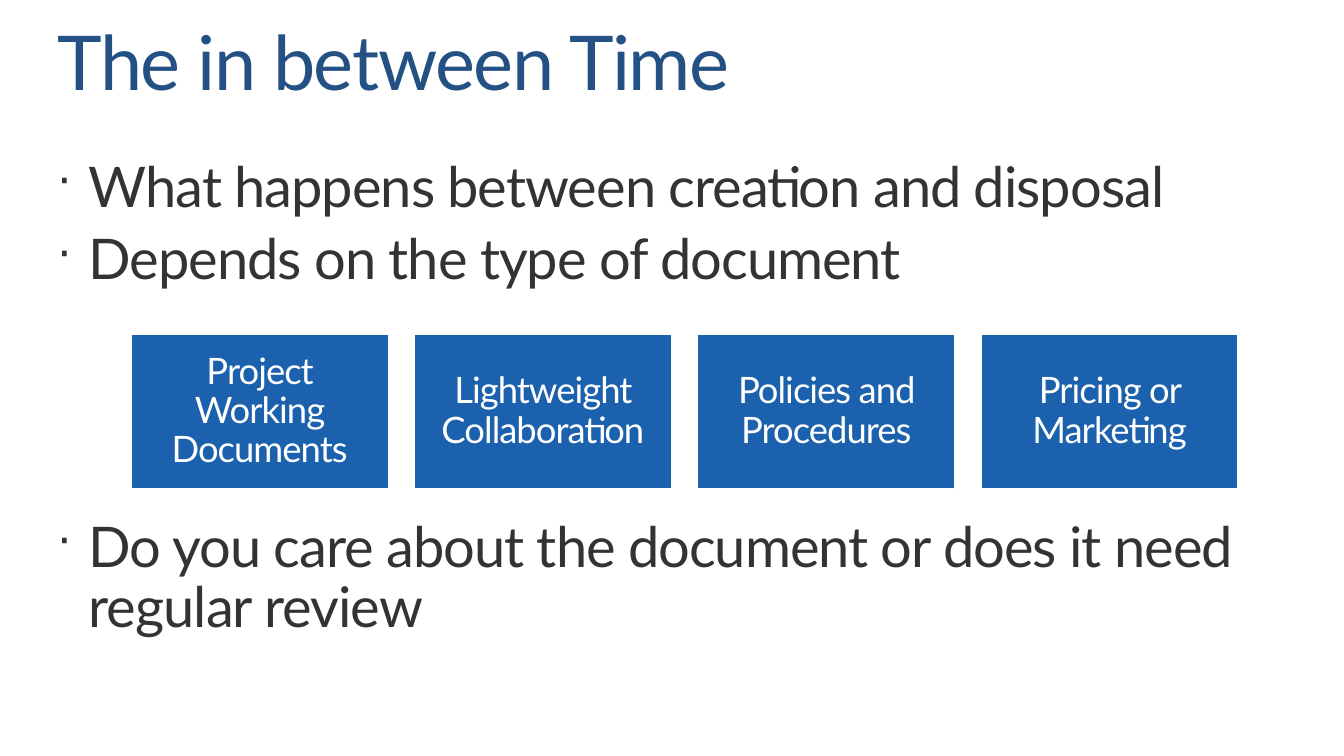
from lxml import etree
from pptx import Presentation, util as u
from pptx.dml.color import RGBColor
from pptx.enum import shapes, text
from pptx.oxml.ns import qn

BLUE, NAVY, GREY, WHITE = "1B61AE", "235183", "333333", "FFFFFF"


def rgb(code):
    return RGBColor.from_string(code)


def write(s, lines, size, color, tracking, inset=0, bullet=False):
    """Fill a shape with one paragraph per line; tracking is in 1/100 pt."""
    tf = s.text_frame
    tf.word_wrap = True
    for side in ("left", "top", "right", "bottom"):
        setattr(tf, f"margin_{side}", u.Inches(inset))
    for i, line in enumerate(lines):
        p = tf.paragraphs[0] if i == 0 else tf.add_paragraph()
        if bullet:
            pPr = p._p.get_or_add_pPr()
            pPr.set("marL", str(u.Inches(0.31)))
            pPr.set("indent", str(-u.Inches(0.31)))
            etree.SubElement(pPr, qn("a:buSzPct"), val="80000")
            etree.SubElement(pPr, qn("a:buChar"), char="·")
        p.line_spacing = 0.9
        if i:
            p.space_before = u.Pt(8.5)
        r = p.add_run()
        r.text = line
        for name, value in {"name": "Lato", "size": u.Pt(size)}.items():
            setattr(r.font, name, value)
        r.font.color.rgb = rgb(color)
        r._r.get_or_add_rPr().set("spc", str(tracking))
    return tf


prs = Presentation()
prs.slide_width, prs.slide_height = u.Inches(13.33), u.Inches(7.5)
slide = prs.slides.add_slide(prs.slide_layouts[6])

# Title and bullets share one left edge and width
LEFT, WIDTH = 0.57, 12.19
blocks = [
    (0.25, 0.82, ["The in between Time"],
     dict(size=54, color=NAVY, tracking=-100)),
    (1.58, 1.4, ["What happens between creation and disposal",
                 "Depends on the type of document"],
     dict(size=40, color=GREY, tracking=-70, bullet=True)),
    (5.15, 1.25, ["Do you care about the document or does it need regular review"],
     dict(size=40, color=GREY, tracking=-70, bullet=True)),
]
for top, height, lines, style in blocks:
    s = slide.shapes.add_textbox(*map(u.Inches, (LEFT, top, WIDTH, height)))
    write(s, lines, **style)

# Row of document types
FIRST, PITCH, ROW = 1.3, 2.81, 3.32
CARD_W, CARD_H = 2.55, 1.53
kinds = ["Project Working Documents", "Lightweight Collaboration",
         "Policies and Procedures", "Pricing or Marketing"]
for col, kind in enumerate(kinds):
    s = slide.shapes.add_shape(
        shapes.MSO_SHAPE.RECTANGLE,
        *map(u.Inches, (FIRST + col * PITCH, ROW, CARD_W, CARD_H)))
    s.shadow.inherit = False
    s.fill.solid()
    s.fill.fore_color.rgb = rgb(BLUE)
    s.line.color.rgb = rgb(WHITE)
    s.line.width = u.Pt(0.85)
    tf = write(s, [kind], 26, WHITE, -70, inset=0.11)
    tf.vertical_anchor = text.MSO_ANCHOR.MIDDLE
    tf.paragraphs[0].alignment = text.PP_ALIGN.CENTER

prs.save("out.pptx")
